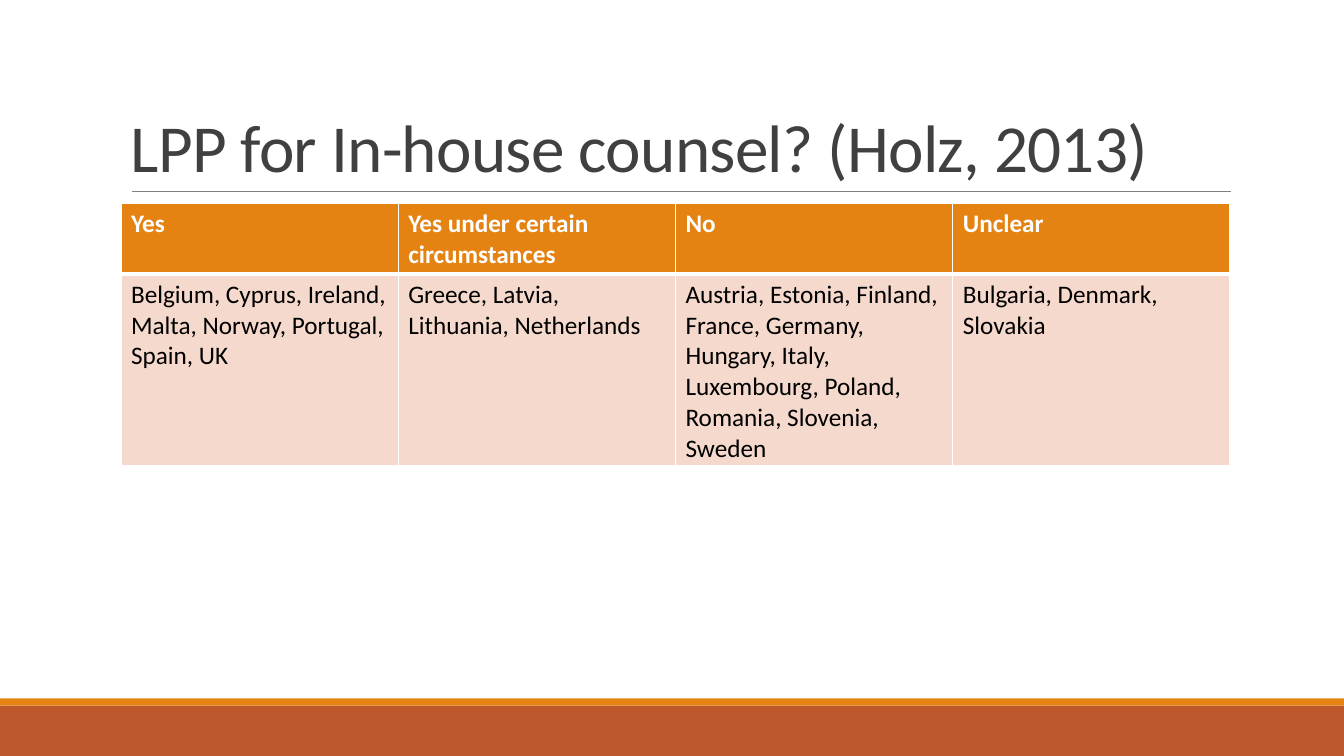
from lxml import etree
from pptx import Presentation
from pptx.dml.color import RGBColor
from pptx.enum.shapes import MSO_CONNECTOR, MSO_SHAPE
from pptx.enum.text import MSO_ANCHOR
from pptx.oxml.ns import qn
from pptx.util import Inches, Pt

RECTANGLE = MSO_SHAPE.RECTANGLE
STRAIGHT = MSO_CONNECTOR.STRAIGHT
BOTTOM = MSO_ANCHOR.BOTTOM
WHITE = RGBColor(0xFF, 0xFF, 0xFF)
BLACK = RGBColor(0x00, 0x00, 0x00)
CHARCOAL = RGBColor(0x40, 0x40, 0x40)
GRAY = RGBColor(0x80, 0x80, 0x80)
ORANGE = RGBColor(0xE4, 0x83, 0x12)
RUST = RGBColor(0xBD, 0x58, 0x2C)
PEACH = RGBColor(0xF5, 0xD9, 0xCC)

FONT = "Calibri"
ROW_HEIGHTS = (0.7, 1.9)
COLUMN_WIDTH = 2.75
ANSWERS = (
    ("Yes", "Belgium, Cyprus, Ireland, Malta, Norway, Portugal, Spain, UK"),
    ("Yes under certain circumstances", "Greece, Latvia, Lithuania, Netherlands"),
    ("No", "Austria, Estonia, Finland, France, Germany, Hungary, Italy, "
           "Luxembourg, Poland, Romania, Slovenia, Sweden"),
    ("Unclear", "Bulgaria, Denmark, Slovakia"),
)


def add_band(page, top, height, color):
    """Add a full-width band at the foot of the page."""
    band = page.shapes.add_shape(
        RECTANGLE, 0, Inches(top), Inches(13.33), Inches(height))
    band.shadow.inherit = False
    band.fill.solid()
    band.fill.fore_color.rgb = color
    band.line.fill.background()


def add_rule(page, left, right, top):
    """Add the thin horizontal rule below the title."""
    rule = page.shapes.add_connector(
        STRAIGHT, Inches(left), Inches(top), Inches(right), Inches(top))
    rule.line.color.rgb = GRAY
    rule.line.width = Pt(0.5)
    etree.SubElement(rule._element.spPr, qn("a:effectLst"))


def add_span(para, text, size, color, bold=False):
    """Add a formatted run to a paragraph and return it."""
    span = para.add_run()
    span.text = text
    span.font.name = FONT
    span.font.size = Pt(size)
    span.font.bold = bold
    span.font.color.rgb = color
    return span


def add_title(page, text):
    """Add the bottom-anchored title."""
    box = page.shapes.add_textbox(
        Inches(1.2), Inches(0.31), Inches(11), Inches(1.59))
    frame = box.text_frame
    frame.word_wrap = True
    frame.vertical_anchor = BOTTOM
    para = frame.paragraphs[0]
    para.line_spacing = 0.85
    span = add_span(para, text, 48, CHARCOAL)
    span.font._element.set("spc", "-50")


def add_borders(cell, top, bottom):
    """Give a cell white borders with the given top and bottom widths."""
    properties = cell._tc.get_or_add_tcPr()
    for side, width in (("L", 1), ("R", 1), ("T", top), ("B", bottom)):
        line = etree.SubElement(properties, qn(f"a:ln{side}"), w=str(Pt(width)))
        fill = etree.SubElement(line, qn("a:solidFill"))
        etree.SubElement(fill, qn("a:srgbClr"), val=str(WHITE))


def fill_cell(cell, text, is_header):
    """Write and style one table cell."""
    add_borders(cell, 1 if is_header else 3, 3 if is_header else 1)
    cell.fill.solid()
    cell.fill.fore_color.rgb = ORANGE if is_header else PEACH
    color = WHITE if is_header else BLACK
    add_span(cell.text_frame.paragraphs[0], text, 18, color, is_header)


def add_answer_table(page):
    """Add the table of countries grouped by answer."""
    table = page.shapes.add_table(
        len(ROW_HEIGHTS), len(ANSWERS), Inches(1.2), Inches(2.02),
        Inches(COLUMN_WIDTH * len(ANSWERS)), Inches(sum(ROW_HEIGHTS))).table
    for row, height in zip(table.rows, ROW_HEIGHTS):
        row.height = Inches(height)
    for column, texts in enumerate(ANSWERS):
        table.columns[column].width = Inches(COLUMN_WIDTH)
        for row, text in enumerate(texts):
            fill_cell(table.cell(row, column), text, row == 0)


def main():
    """Build and save the deck."""
    deck = Presentation()
    deck.slide_width = Inches(13.33)
    deck.slide_height = Inches(7.5)
    page = deck.slides.add_slide(deck.slide_layouts[6])
    add_band(page, 7, 0.5, RUST)
    add_band(page, 6.93, 0.07, ORANGE)
    add_rule(page, 1.31, 12.21, 1.9)
    add_title(page, "LPP for In-house counsel? (Holz, 2013)")
    add_answer_table(page)
    deck.save("out.pptx")


if __name__ == "__main__":
    main()
